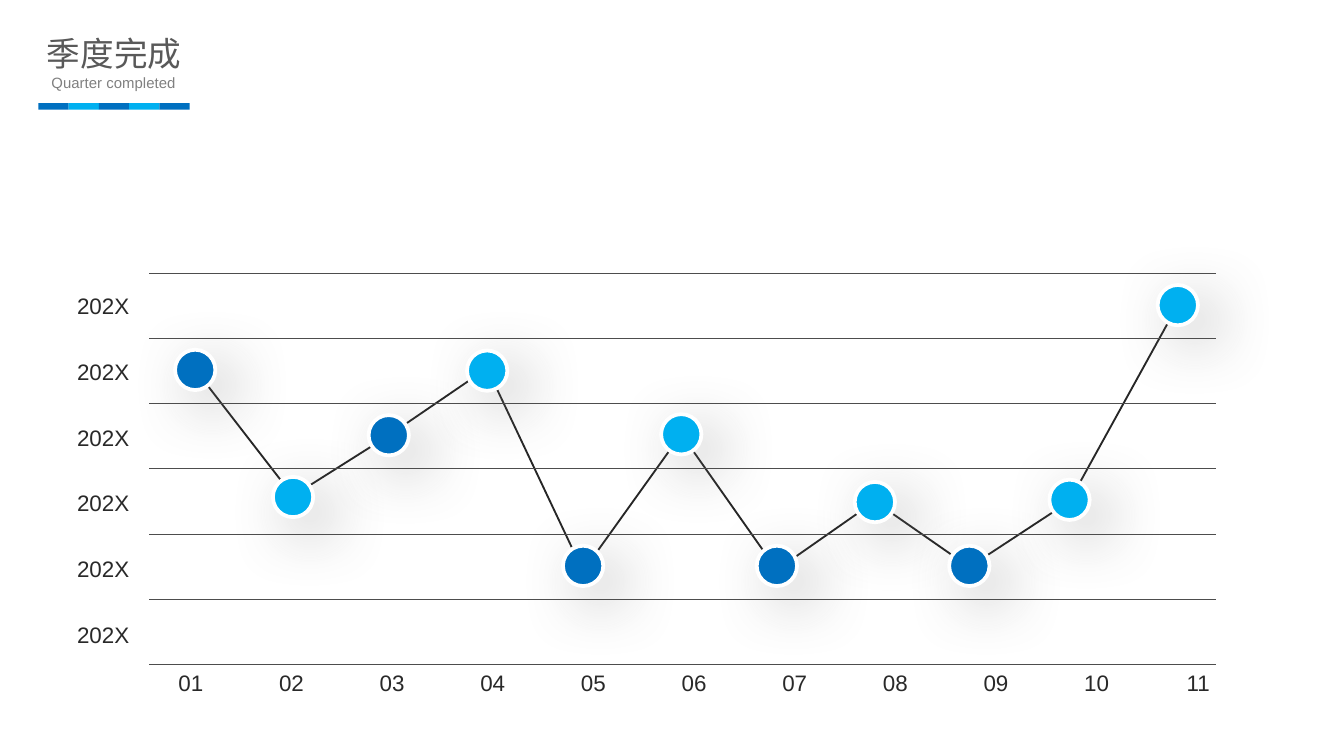
import dataclasses

import lxml.etree
import pptx
import pptx.dml.color
import pptx.enum.shapes
import pptx.enum.text
import pptx.oxml.ns
import pptx.util

Pt = pptx.util.Pt
PP_ALIGN = pptx.enum.text.PP_ALIGN
MSO_ANCHOR = pptx.enum.text.MSO_ANCHOR
MSO_SHAPE = pptx.enum.shapes.MSO_SHAPE
qn = pptx.oxml.ns.qn

FONT = "Arial"
BLUE, CYAN, WHITE = "0070C0", "00B0F0", "FFFFFF"
LABEL, GRID, TREND, SHADOW = "292929", "4D4D4D", "262626", "808080"
GRID_LEFT, GRID_RIGHT, GRID_TOP, GRID_STEP = 79.9, 651.6, 146.3, 34.92
MARKER_SIZE = 21.6
LABEL_W, LABEL_H = 45.4, 19.4


@dataclasses.dataclass
class Marker:
    """Centre of a month's marker, and the height of the line behind it."""
    x: float
    y: float
    line_y: float
    color: str


MARKERS = [
    Marker(104.6, 198.2, 198, BLUE),
    Marker(157, 266.3, 265.7, CYAN),
    Marker(208.3, 233.2, 233.3, BLUE),
    Marker(261, 198.6, 197.3, CYAN),
    Marker(312.4, 303.2, 306, BLUE),
    Marker(365, 232.7, 232.6, CYAN),
    Marker(416.2, 303.2, 305.3, BLUE),
    Marker(468.7, 269, 268.6, CYAN),
    Marker(519.3, 303.2, 303.8, BLUE),
    Marker(573, 267.8, 268.6, CYAN),
    Marker(631, 163.5, 163.4, CYAN),
]


def rgb(color: str) -> pptx.dml.color.RGBColor:
    return pptx.dml.color.RGBColor.from_string(color)


def add_effects(sp) -> lxml.etree._Element:
    """Give a connector an empty effect list, which turns its shadow off."""
    return lxml.etree.SubElement(sp._element.spPr, qn("a:effectLst"))


def add_soft_shadow(sp) -> None:
    sp.shadow.inherit = False
    effects = sp._element.spPr.find(qn("a:effectLst"))
    shadow = lxml.etree.SubElement(
        effects, qn("a:outerShdw"), blurRad=str(Pt(33)), dist=str(Pt(12)),
        dir=str(42 * 60000), algn="ctr", rotWithShape="0")
    color = lxml.etree.SubElement(shadow, qn("a:srgbClr"), val=SHADOW)
    lxml.etree.SubElement(color, qn("a:alpha"), val="52000")


def set_text(sp, text: str, size: float, color: str, align,
             anchor=MSO_ANCHOR.MIDDLE, wrap: bool = True) -> None:
    tf = sp.text_frame
    tf.text = text
    tf.word_wrap = wrap
    tf.auto_size = pptx.enum.text.MSO_AUTO_SIZE.NONE
    tf.vertical_anchor = anchor
    p = tf.paragraphs[0]
    p.alignment = align
    font = p.runs[0].font
    font.name, font.size = FONT, Pt(size)
    font.color.rgb = rgb(color)


def add_label(s, text: str, x: float, y: float) -> None:
    sp = s.shapes.add_textbox(Pt(x), Pt(y), Pt(LABEL_W), Pt(LABEL_H))
    set_text(sp, text, 12, LABEL, PP_ALIGN.RIGHT)


def add_heading(s) -> None:
    title = s.shapes.title
    title.left, title.top = Pt(19.4), Pt(15.1)
    title.width, title.height = Pt(83.5), Pt(27.4)
    set_text(title, "季度完成", 18, "595959", PP_ALIGN.CENTER,
             MSO_ANCHOR.TOP, wrap=False)
    tf = title.text_frame
    tf.margin_left = tf.margin_right = Pt(5.4)
    tf.margin_top = tf.margin_bottom = Pt(2.7)

    subtitle = s.shapes.add_textbox(Pt(0), Pt(36), Pt(121.7), Pt(17.3))
    set_text(subtitle, "Quarter completed", 8, "808080", PP_ALIGN.CENTER,
             MSO_ANCHOR.TOP)

    for i in range(5):
        bar = s.shapes.add_shape(MSO_SHAPE.RECTANGLE, Pt(20.6 + 16.2 * i),
                                 Pt(55.2), Pt(16.2), Pt(3.6))
        bar.shadow.inherit = False
        bar.fill.solid()
        bar.fill.fore_color.rgb = rgb(CYAN if i % 2 else BLUE)
        bar.line.fill.background()


def add_trend_line(s, markers: list[Marker]) -> None:
    points = [(Pt(m.x), Pt(m.line_y)) for m in markers]
    builder = s.shapes.build_freeform(*points[0])
    builder.add_line_segments(points[1:], close=False)
    sp = builder.convert_to_shape()
    sp.shadow.inherit = False
    sp.fill.background()
    sp.line.color.rgb = rgb(TREND)
    sp.line.width = Pt(1)


def add_marker(s, m: Marker) -> None:
    half = MARKER_SIZE / 2
    sp = s.shapes.add_shape(MSO_SHAPE.OVAL, Pt(m.x - half), Pt(m.y - half),
                            Pt(MARKER_SIZE), Pt(MARKER_SIZE))
    sp.fill.solid()
    sp.fill.fore_color.rgb = rgb(m.color)
    sp.line.color.rgb = rgb(WHITE)
    sp.line.width = Pt(2)
    add_soft_shadow(sp)


def add_grid_line(s, y: float) -> None:
    line = s.shapes.add_connector(
        pptx.enum.shapes.MSO_CONNECTOR.STRAIGHT,
        Pt(GRID_LEFT), Pt(y), Pt(GRID_RIGHT), Pt(y))
    line.line.color.rgb = rgb(GRID)
    line.line.width = Pt(0.25)
    add_effects(line)


def main() -> None:
    prs = pptx.Presentation()
    prs.slide_width, prs.slide_height = Pt(720), Pt(405)
    s = prs.slides.add_slide(prs.slide_layouts[5])

    add_heading(s)
    add_trend_line(s, MARKERS)
    for m in MARKERS:
        add_marker(s, m)
    for i in range(7):
        add_grid_line(s, GRID_TOP + GRID_STEP * i)
    for i in range(6):
        add_label(s, "202X", 31, 154.2 + 35.2 * i)
    for i in range(len(MARKERS)):
        add_label(s, f"{i + 1:02}", 70.6 + 53.92 * i, 355.8)

    prs.save("out.pptx")


if __name__ == "__main__":
    main()
